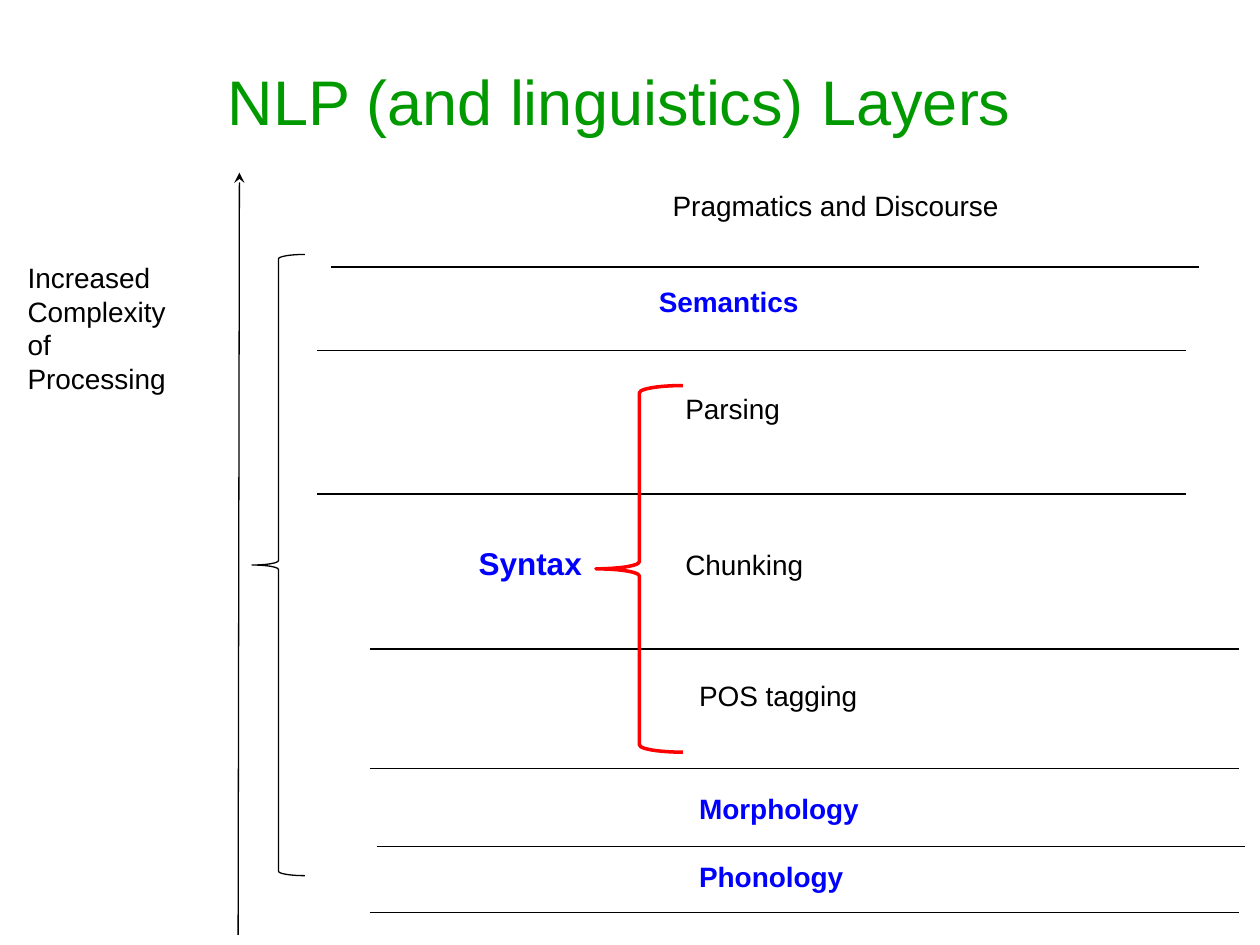
from dataclasses import dataclass

import lxml.etree
import pptx
import pptx.dml.color
import pptx.enum.shapes
import pptx.enum.text
import pptx.oxml.ns
import pptx.util
from pptx.util import Inches


@dataclass(frozen=True)
class Theme:
    font: str = "Arial"
    title_color: str = "009900"
    ink: str = "000000"
    focus: str = "0000FF"
    syntax_brace: str = "FF0000"
    title_size: int = 36
    syntax_size: int = 18
    label_size: int = 16
    thin: float = 0.75
    thick: float = 2


THEME = Theme()


@dataclass(frozen=True)
class Label:
    lines: tuple[str, ...]
    left: float
    top: float
    width: float
    height: float = 0.37
    size: int = THEME.label_size
    color: str = THEME.ink
    bold: bool = False
    wrap: bool = True
    centered: bool = False


@dataclass(frozen=True)
class Divider:
    left: float
    top: float


@dataclass(frozen=True)
class Brace:
    left: float
    top: float
    width: float
    height: float
    color: str
    weight: float


DIVIDER_LENGTH = 6.89
DIVIDERS = (
    Divider(2.63, 2.12),
    Divider(2.52, 2.78),
    Divider(2.52, 3.92),
    Divider(2.94, 5.15),
    Divider(2.94, 6.1),
    Divider(2.99, 6.72),
    Divider(2.94, 7.24),
)

TITLE = Label(("NLP (and linguistics) Layers",), 0, 0.25, 9.83, 1.1,
              THEME.title_size, THEME.title_color, centered=True)
LAYERS = (
    Label(("Pragmatics and Discourse",), 5.24, 1.45, 3.98),
    Label(("Semantics",), 5.13, 2.21, 2.02, color=THEME.focus, bold=True),
    Label(("Parsing",), 5.34, 3.06, 1.55),
    Label(("Chunking",), 5.34, 4.3, 1.55),
    Label(("POS tagging",), 5.45, 5.34, 1.97),
    Label(("Morphology",), 5.45, 6.23, 2.31, color=THEME.focus, bold=True),
    Label(("Phonology",), 5.45, 6.77, 2.31, color=THEME.focus, bold=True),
)
COMPLEXITY = Label(("Increased", "Complexity", "of", "Processing"),
                   0.12, 2.02, 1.88, 1.18)
SYNTAX = Label(("Syntax",), 3.7, 4.27, 1.03, 0.4, THEME.syntax_size,
               THEME.focus, bold=True, wrap=False)

BRACES = (
    Brace(2, 2.02, 0.42, 4.93, THEME.ink, THEME.thin),
    Brace(4.73, 3.06, 0.69, 2.91, THEME.syntax_brace, THEME.thick),
)


def rgb(color: str) -> pptx.dml.color.RGBColor:
    return pptx.dml.color.RGBColor.from_string(color)


def draw_label(slide, label: Label) -> None:
    box = slide.shapes.add_textbox(Inches(label.left), Inches(label.top),
                                   Inches(label.width), Inches(label.height))
    frame = box.text_frame
    frame.word_wrap = label.wrap
    if label.centered:
        frame.vertical_anchor = pptx.enum.text.MSO_ANCHOR.MIDDLE
    for index, line in enumerate(label.lines):
        paragraph = frame.add_paragraph() if index else frame.paragraphs[0]
        if label.centered:
            paragraph.alignment = pptx.enum.text.PP_ALIGN.CENTER
        run = paragraph.add_run()
        run.text = line
        run.font.name = THEME.font
        run.font.size = pptx.util.Pt(label.size)
        run.font.bold = label.bold
        run.font.color.rgb = rgb(label.color)


def draw_line(slide, x1: float, y1: float, x2: float, y2: float,
              arrow: bool = False) -> None:
    line = slide.shapes.add_connector(
        pptx.enum.shapes.MSO_CONNECTOR.STRAIGHT,
        Inches(x1), Inches(y1), Inches(x2), Inches(y2))
    line.line.color.rgb = rgb(THEME.ink)
    line.line.width = pptx.util.Pt(THEME.thin)
    properties = line._element.spPr
    if arrow:
        outline = properties.find(pptx.oxml.ns.qn("a:ln"))
        lxml.etree.SubElement(outline, pptx.oxml.ns.qn("a:tailEnd"),
                              type="stealth")
    lxml.etree.SubElement(properties, pptx.oxml.ns.qn("a:effectLst"))


def draw_brace(slide, brace: Brace) -> None:
    shape = slide.shapes.add_shape(
        pptx.enum.shapes.MSO_SHAPE.LEFT_BRACE,
        Inches(brace.left), Inches(brace.top),
        Inches(brace.width), Inches(brace.height))
    shape.shadow.inherit = False
    shape.fill.background()
    shape.line.color.rgb = rgb(brace.color)
    shape.line.width = pptx.util.Pt(brace.weight)


def main() -> None:
    deck = pptx.Presentation()
    deck.slide_width, deck.slide_height = Inches(10), Inches(7.5)
    slide = deck.slides.add_slide(deck.slide_layouts[6])

    for divider in DIVIDERS:
        draw_line(slide, divider.left, divider.top,
                  divider.left + DIVIDER_LENGTH, divider.top)
    draw_line(slide, 1.89, 7.42, 1.9, 1.37, arrow=True)
    for brace in BRACES:
        draw_brace(slide, brace)
    for label in (TITLE, *LAYERS, COMPLEXITY, SYNTAX):
        draw_label(slide, label)

    deck.save("out.pptx")


if __name__ == "__main__":
    main()
